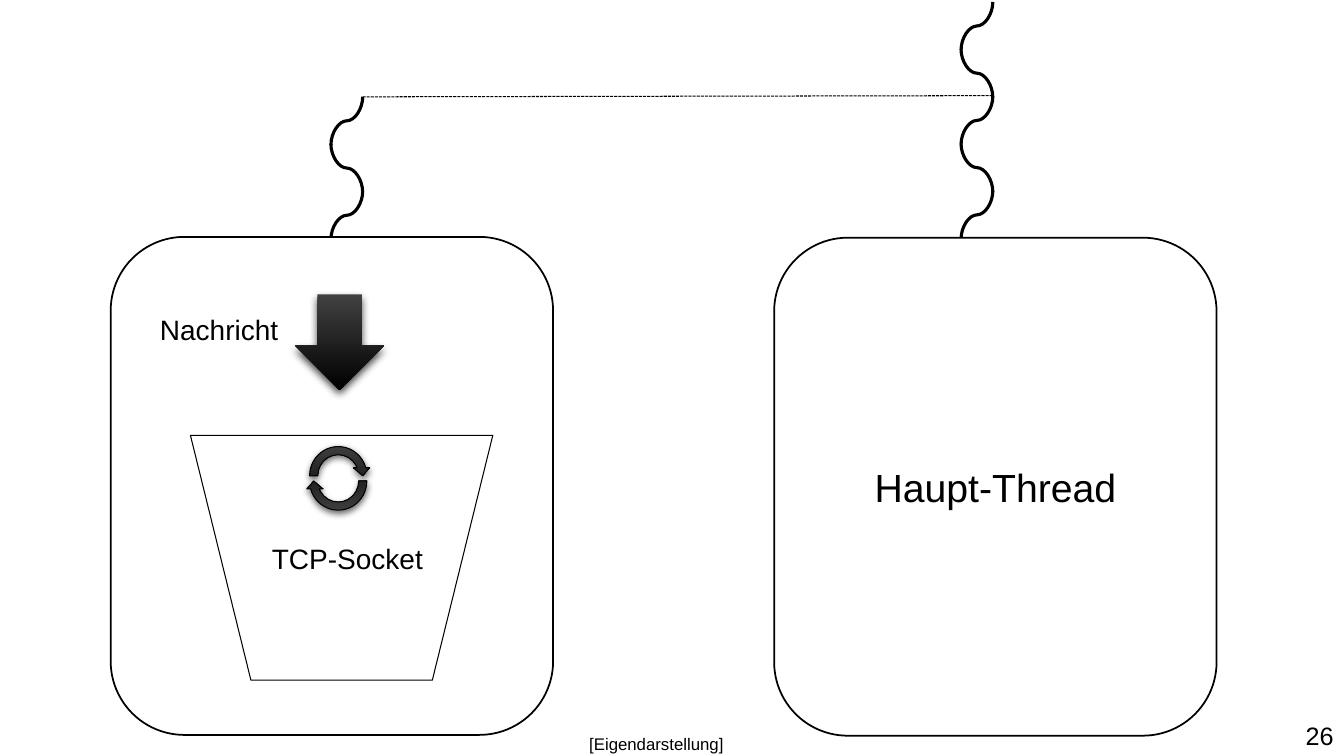
from lxml.etree import SubElement
from pptx import Presentation
from pptx.dml.color import RGBColor
from pptx.enum.dml import MSO_LINE
from pptx.enum.shapes import MSO_CONNECTOR, MSO_SHAPE
from pptx.enum.text import MSO_ANCHOR, PP_ALIGN
from pptx.oxml.ns import qn
from pptx.util import Cm, Pt

BLACK, WHITE, GREY = "000000", "FFFFFF", "414141"
WAVE_WIDTH, WAVE_LENGTH, WAVE_STEP = 0.8, 1.21, 1.19
THREAD_SIZE = (11.15, 12.55)


def rgb(color):
    return RGBColor.from_string(color)


def set_format(target, values):
    for name, value in values.items():
        setattr(target, name, value)


def set_line(line, width, dash=None):
    line.color.rgb = rgb(BLACK)
    set_format(line, {"width": Pt(width), "dash_style": dash})


def write(shape, text, size, align=PP_ALIGN.LEFT, anchor=MSO_ANCHOR.TOP, wrap=False):
    frame = shape.text_frame
    set_format(frame, {"word_wrap": wrap, "vertical_anchor": anchor})
    paragraph = frame.paragraphs[0]
    set_format(paragraph, {"text": text, "alignment": align})
    set_format(paragraph.font, {"size": Pt(size), "name": "Arial"})
    paragraph.font.color.rgb = rgb(BLACK)


def add_label(slide, box, text, size, **layout):
    write(slide.shapes.add_textbox(*map(Cm, box)), text, size, **layout)


def add_outline(slide, kind, box, width, fill=None):
    shape = slide.shapes.add_shape(kind, *map(Cm, box))
    shape.shadow.inherit = False
    if fill:
        shape.fill.solid()
        shape.fill.fore_color.rgb = rgb(fill)
    else:
        shape.fill.background()
    set_line(shape.line, width)
    return shape


def add_dark_arrow(slide, kind, box, shadow, width=None, turned=False):
    """Arrow with a vertical gradient; shadow is (opacity, blur, distance)."""
    shape = slide.shapes.add_shape(kind, *map(Cm, box))
    shape.fill.gradient()
    shape.fill.gradient_angle = 270
    for stop, position, color in zip(shape.fill.gradient_stops, (0, 1), (GREY, BLACK)):
        stop.position = position
        stop.color.rgb = rgb(color)
    if width:
        set_line(shape.line, width)
    else:
        shape.line.fill.background()
    properties = shape._element.spPr
    if turned:
        for flip in ("flipH", "flipV"):
            properties.xfrm.set(flip, "1")

    # Soft shadow straight below
    opacity, blur, distance = shadow
    shape.shadow.inherit = False
    outer = SubElement(properties.find(qn("a:effectLst")), qn("a:outerShdw"),
                       blurRad=str(Pt(blur)), dist=str(Pt(distance)),
                       dir="5400000", rotWithShape="0")
    color = SubElement(outer, qn("a:srgbClr"), val=BLACK)
    SubElement(color, qn("a:alpha"), val=str(opacity * 1000))


def add_connector(slide, kind, points, width, dash=None):
    connector = slide.shapes.add_connector(kind, *map(Cm, points))
    set_line(connector.line, width, dash)
    SubElement(connector._element.spPr, qn("a:effectLst"))
    return connector


def add_wave(slide, right, top, pieces):
    """Thread line of curves that swing left and right in turn."""
    center_x = right - WAVE_WIDTH / 2
    for index in range(pieces):
        center_y = top + index * WAVE_STEP + WAVE_LENGTH / 2
        to_right = index % 2 == 1
        half = -WAVE_LENGTH / 2 if to_right else WAVE_LENGTH / 2
        points = (center_x - half, center_y - WAVE_WIDTH / 2,
                  center_x + half, center_y + WAVE_WIDTH / 2)
        connector = add_connector(slide, MSO_CONNECTOR.CURVE, points, 2.25)
        angle = 270 if to_right else 90
        connector._element.spPr.xfrm.set("rot", str(angle * 60000))


def main():
    presentation = Presentation()
    set_format(presentation, {"slide_width": Cm(33.87), "slide_height": Cm(19.05)})
    slide = presentation.slides.add_slide(presentation.slide_layouts[6])

    # Thread lines and the branch between them
    add_wave(slide, 9.14, 2.44, 3)
    add_wave(slide, 25.02, 0.05, 5)
    add_connector(slide, MSO_CONNECTOR.STRAIGHT, (25.02, 2.41, 9.14, 2.44),
                  0.75, MSO_LINE.SQUARE_DOT)

    # Socket thread
    add_outline(slide, MSO_SHAPE.ROUNDED_RECTANGLE, (2.79, 5.97, *THREAD_SIZE), 1.25, WHITE)
    add_outline(slide, MSO_SHAPE.FLOWCHART_MANUAL_OPERATION, (4.8, 10.97, 7.62, 6.17), 0.75)
    add_label(slide, (6.6, 13.51, 4.32, 1.12), "TCP-Socket", 20)
    add_dark_arrow(slide, MSO_SHAPE.DOWN_ARROW, (7.44, 7.42, 2.24, 2.41), (75, 6, 3))
    add_label(slide, (3.78, 7.75, 3.66, 1.12), "Nachricht", 20)
    for top, turned in ((11.15, False), (11.28, True)):
        add_dark_arrow(slide, MSO_SHAPE.CIRCULAR_ARROW, (7.7, top, 1.65, 1.68),
                       (60, 5, 2), 0.75, turned)

    # Main thread
    main_thread = add_outline(slide, MSO_SHAPE.ROUNDED_RECTANGLE,
                              (19.51, 5.99, *THREAD_SIZE), 1.25, WHITE)
    write(main_thread, "Haupt-Thread", 28, PP_ALIGN.CENTER, MSO_ANCHOR.MIDDLE, True)

    # Footer
    add_label(slide, (31.78, 18.01, 2.08, 1.02), "26", 18,
              align=PP_ALIGN.RIGHT, anchor=MSO_ANCHOR.MIDDLE, wrap=True)
    add_label(slide, (14.6, 18.36, 4.65, 0.76), "[Eigendarstellung]", 12, wrap=True)

    presentation.save("out.pptx")


if __name__ == "__main__":
    main()
